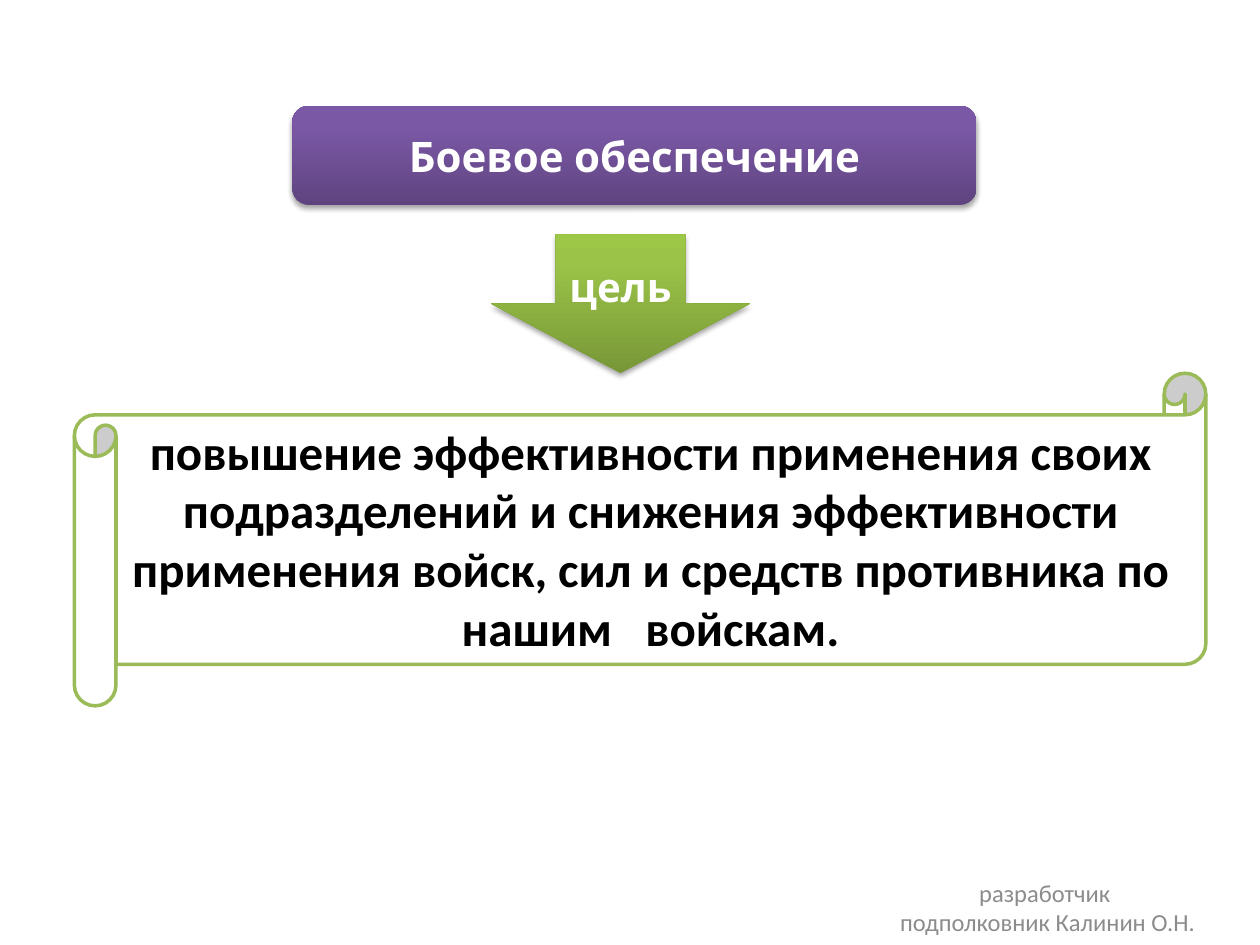
import dataclasses

import lxml.etree
import pptx
import pptx.dml.color
import pptx.enum.shapes
import pptx.enum.text
import pptx.oxml.ns
import pptx.util

SHAPE = pptx.enum.shapes.MSO_SHAPE
ANCHOR = pptx.enum.text.MSO_ANCHOR
qn = pptx.oxml.ns.qn


def rgb(value):
    return pptx.dml.color.RGBColor.from_string(value)


@dataclasses.dataclass(frozen=True)
class Theme:
    paper: str = "FFFFFF"
    ink: str = "000000"
    muted: str = "8C8C8C"
    outline: str = "9BBB59"
    green: tuple = ((0, "779737"), (80, "9BC348"), (100, "9DC746"))
    purple: tuple = ((0, "5F4480"), (80, "7B58A6"), (100, "7C57A8"))
    body_font: str = "Calibri"
    head_font: str = "Karla"
    title_size: int = 24
    arrow_size: int = 23
    body_size: int = 28
    note_size: int = 14


class Deck:
    def __init__(self, theme, width, height):
        self.theme = theme
        self.prs = pptx.Presentation()
        self.prs.slide_width = pptx.util.Inches(width)
        self.prs.slide_height = pptx.util.Inches(height)
        self.s = self.prs.slides.add_slide(self.prs.slide_layouts[6])

    def place(self, x, y, w, h):
        sw, sh = self.prs.slide_width, self.prs.slide_height
        return [round(v) for v in (x * sw, y * sh, w * sw, h * sh)]

    def set_text(self, sp, lines, anchor, **font):
        tf = sp.text_frame
        tf.word_wrap = True
        tf.vertical_anchor = anchor
        for i, line in enumerate(lines):
            p = tf.add_paragraph() if i else tf.paragraphs[0]
            p.alignment = pptx.enum.text.PP_ALIGN.CENTER
            r = p.add_run()
            r.text = line
            r.font.color.rgb = rgb(font["color"])
            fmt = {"name": font["name"], "size": pptx.util.Pt(font["size"]),
                   "bold": font.get("bold", False)}
            for key, value in fmt.items():
                setattr(r.font, key, value)

    def note(self, box, lines):
        sp = self.s.shapes.add_textbox(*self.place(*box))
        self.set_text(sp, lines, ANCHOR.MIDDLE, name=self.theme.body_font,
                      size=self.theme.note_size, color=self.theme.muted)

    def scroll(self, box, lines):
        sp = self.s.shapes.add_shape(SHAPE.HORIZONTAL_SCROLL, *self.place(*box))
        sp.shadow.inherit = False
        sp.fill.solid()
        sp.fill.fore_color.rgb = rgb(self.theme.paper)
        sp.line.color.rgb = rgb(self.theme.outline)
        sp.line.width = pptx.util.Pt(2)
        self.set_text(sp, lines, ANCHOR.TOP, name=self.theme.body_font,
                      size=self.theme.body_size, color=self.theme.ink, bold=True)

    def glossy(self, kind, box, text, stops, size):
        sp = self.s.shapes.add_shape(kind, *self.place(*box))
        sp.line.fill.background()
        self.gradient(sp, stops)
        self.drop_shadow(sp)
        self.set_text(sp, [text], ANCHOR.MIDDLE, name=self.theme.head_font,
                      size=size, color=self.theme.paper, bold=True)

    def gradient(self, sp, stops):
        sp.fill.gradient()
        sp.fill.gradient_angle = 90
        gs_list = sp.element.spPr.find(".//" + qn("a:gsLst"))
        for gs in list(gs_list):
            gs_list.remove(gs)
        for pos, color in stops:
            gs = lxml.etree.SubElement(gs_list, qn("a:gs"), pos=str(pos * 1000))
            lxml.etree.SubElement(gs, qn("a:srgbClr"), val=color)

    def drop_shadow(self, sp):
        sp.shadow.inherit = False
        effects = sp.element.spPr.find(qn("a:effectLst"))
        shadow = lxml.etree.SubElement(
            effects, qn("a:outerShdw"), blurRad=str(int(pptx.util.Pt(3.1))),
            dist=str(int(pptx.util.Pt(1.8))), dir="5400000", rotWithShape="0")
        color = lxml.etree.SubElement(shadow, qn("a:srgbClr"), val=self.theme.ink)
        lxml.etree.SubElement(color, qn("a:alpha"), val="35000")


def main():
    theme = Theme()
    deck = Deck(theme, 10, 7.5)
    deck.note((0.663, 0.92, 0.337, 0.08),
              ["разработчик ", "подполковник Калинин О.Н."])
    deck.scroll((0.059, 0.395, 0.898, 0.352), [
        "повышение эффективности применения своих подразделений и снижения "
        "эффективности применения войск, сил и средств противника по",
        "нашим   войскам."])
    deck.glossy(SHAPE.DOWN_ARROW, (0.39, 0.248, 0.205, 0.147), "цель",
                theme.green, theme.arrow_size)
    deck.glossy(SHAPE.ROUNDED_RECTANGLE, (0.232, 0.112, 0.543, 0.105),
                "Боевое обеспечение", theme.purple, theme.title_size)
    deck.prs.save("out.pptx")


if __name__ == "__main__":
    main()
